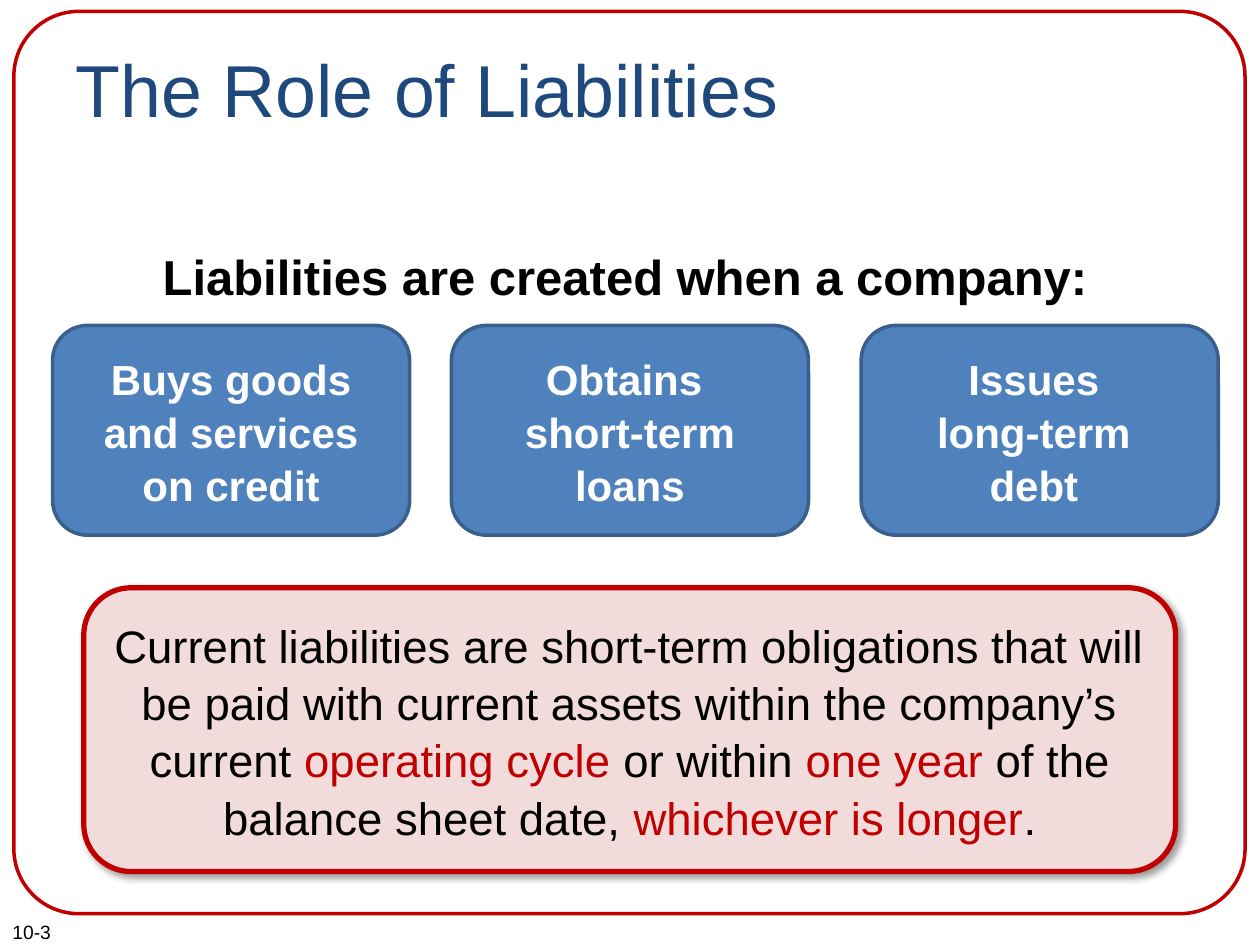
from dataclasses import dataclass

from lxml import etree
from pptx import Presentation
from pptx.dml.color import RGBColor
from pptx.enum.shapes import MSO_SHAPE
from pptx.enum.text import MSO_ANCHOR, MSO_AUTO_SIZE, PP_ALIGN
from pptx.oxml.ns import qn
from pptx.util import Cm, Pt

ROUNDED = MSO_SHAPE.ROUNDED_RECTANGLE
LEFT, CENTER = PP_ALIGN.LEFT, PP_ALIGN.CENTER
TOP, MIDDLE = MSO_ANCHOR.TOP, MSO_ANCHOR.MIDDLE
FIT_SHAPE = MSO_AUTO_SIZE.SHAPE_TO_FIT_TEXT
TITLE_ONLY = 5


@dataclass(frozen=True)
class Theme:
    font: str = "Arial"
    navy: str = "1F497D"
    blue: str = "4F81BD"
    blue_edge: str = "3A5F8C"
    red: str = "C00000"
    pink: str = "F2DCDB"
    black: str = "000000"
    white: str = "FFFFFF"
    title_size: int = 42
    heading_size: int = 28
    definition_size: int = 26
    box_size: int = 24
    number_size: int = 11
    box_spacing: float = 1.05


class SlideBuilder:
    def __init__(self, slide, theme):
        self.slide = slide
        self.theme = theme

    def style_run(self, run, size, color, bold=False):
        run.font.name = self.theme.font
        run.font.size = Pt(size)
        run.font.bold = bold
        run.font.color.rgb = RGBColor.from_string(color)

    def set_text(self, shape, text, size, color, bold=False, align=LEFT):
        paragraph = shape.text_frame.paragraphs[0]
        paragraph.text = text
        paragraph.alignment = align
        for run in paragraph.runs:
            self.style_run(run, size, color, bold)
        return paragraph

    def title(self, text, left, top, width, height):
        title = self.slide.shapes.title
        title.left, title.top = Cm(left), Cm(top)
        title.width, title.height = Cm(width), Cm(height)
        title.text_frame.vertical_anchor = TOP
        self.set_text(title, text, self.theme.title_size, self.theme.navy)

    def label(self, text, left, top, width, height, size, bold=False, align=LEFT):
        label = self.slide.shapes.add_textbox(Cm(left), Cm(top), Cm(width), Cm(height))
        label.text_frame.word_wrap = True
        label.text_frame.auto_size = FIT_SHAPE
        self.set_text(label, text, size, self.theme.black, bold, align)

    def panel(self, left, top, width, height, edge, weight, fill=None, corner=None):
        panel = self.slide.shapes.add_shape(
            ROUNDED, Cm(left), Cm(top), Cm(width), Cm(height))
        panel.shadow.inherit = False
        panel.line.color.rgb = RGBColor.from_string(edge)
        panel.line.width = Pt(weight)
        if fill:
            panel.fill.solid()
            panel.fill.fore_color.rgb = RGBColor.from_string(fill)
        else:
            panel.fill.background()
        if corner:
            panel.adjustments[0] = corner
        panel.text_frame.word_wrap = True
        panel.text_frame.vertical_anchor = MIDDLE
        return panel

    def box(self, text, left, top, width, height):
        theme = self.theme
        box = self.panel(left, top, width, height, theme.blue_edge, 2, theme.blue)
        paragraph = self.set_text(box, text, theme.box_size, theme.white, True, CENTER)
        paragraph.line_spacing = theme.box_spacing

    def definition(self, parts, left, top, width, height):
        theme = self.theme
        panel = self.panel(left, top, width, height, theme.red, 3, theme.pink)
        self.cast_shadow(panel)
        paragraph = panel.text_frame.paragraphs[0]
        paragraph.alignment = CENTER
        paragraph.line_spacing = theme.box_spacing
        for text, color in parts:
            run = paragraph.add_run()
            run.text = text
            self.style_run(run, theme.definition_size, color)

    def cast_shadow(self, shape):
        effects = shape.element.spPr.find(qn("a:effectLst"))
        shadow = etree.SubElement(
            effects, qn("a:outerShdw"), blurRad=str(Pt(4)), dist=str(Pt(3)),
            dir="2700000", algn="tl", rotWithShape="0")
        color = etree.SubElement(shadow, qn("a:srgbClr"), val=self.theme.black)
        etree.SubElement(color, qn("a:alpha"), val="40000")


def main():
    theme = Theme()
    deck = Presentation()
    deck.slide_width, deck.slide_height = Cm(25.4), Cm(19.05)
    slide = deck.slides.add_slide(deck.slide_layouts[TITLE_ONLY])
    builder = SlideBuilder(slide, theme)

    # Page number, frame and title
    builder.label("10-3", 0, 18.42, 3.6, 0.73, theme.number_size)
    builder.panel(0.28, 0.23, 24.82, 18.19, theme.red, 2, corner=0.072)
    builder.title("The Role of Liabilities", 1.27, 0.76, 22.86, 3.18)

    # Definition of current liabilities, key terms in red
    definition = [
        ("Current liabilities are short-term obligations that will be paid with "
         "current assets within the company’s current ", theme.black),
        ("operating cycle ", theme.red),
        ("or within ", theme.black),
        ("one year ", theme.red),
        ("of the balance sheet date, ", theme.black),
        ("whichever is longer", theme.red),
        (".", theme.black),
    ]
    builder.definition(definition, 1.69, 11.85, 22.01, 5.72)

    # Three ways liabilities arise
    sources = [
        ("Buys goods and services on credit", 1.06),
        ("Obtains \nshort-term loans", 9.1),
        ("Issues \nlong-term \ndebt ", 17.36),
    ]
    for source, left in sources:
        builder.box(source, left, 6.56, 7.2, 4.23)
    builder.label("Liabilities are created when a company:", 0.85, 4.85, 23.5, 1.45,
                  theme.heading_size, bold=True, align=CENTER)

    deck.save("out.pptx")


if __name__ == "__main__":
    main()
